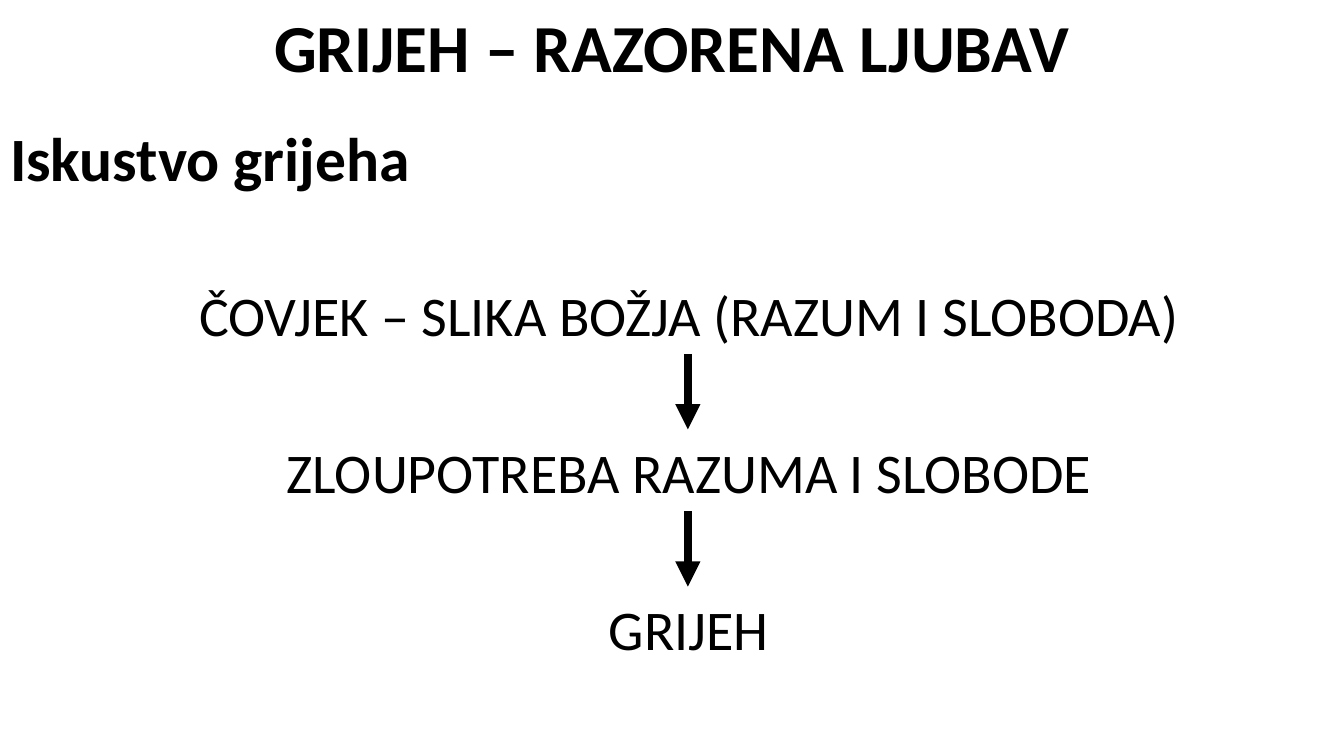
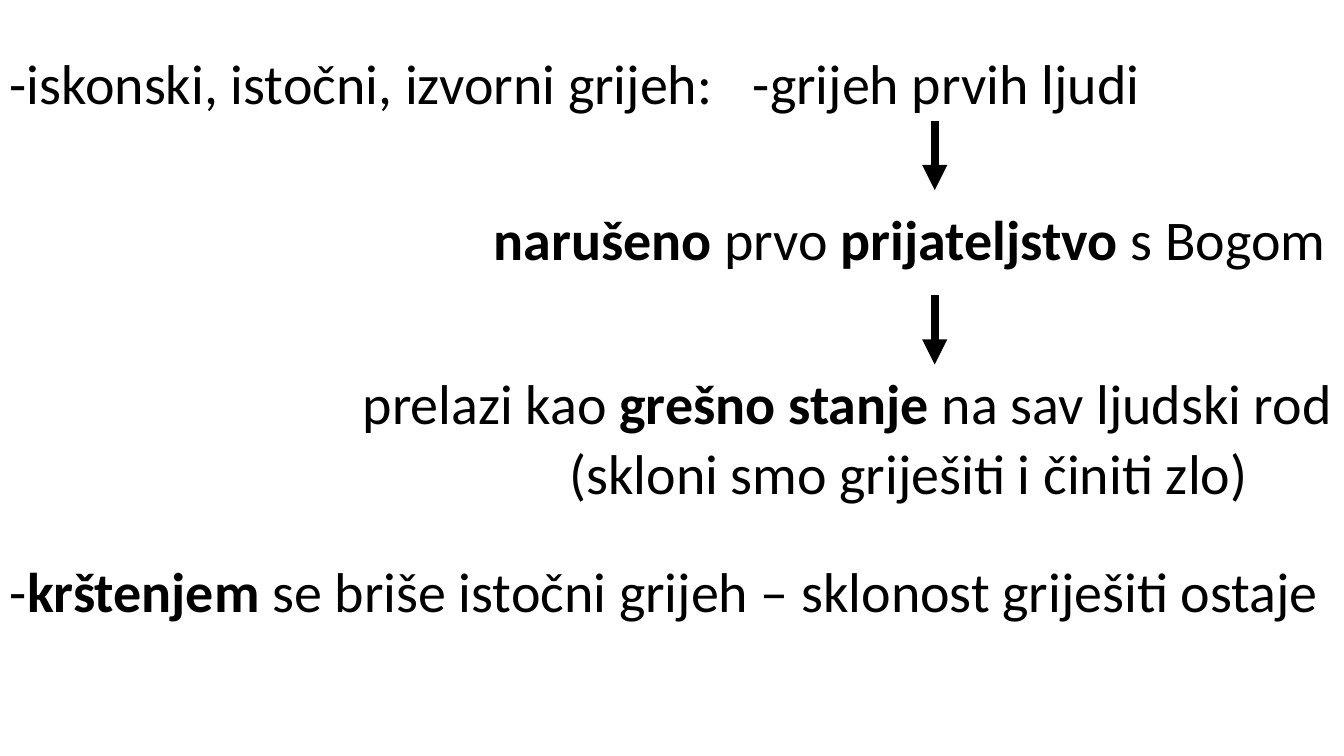
from dataclasses import dataclass

from lxml.etree import SubElement
from pptx import Presentation
from pptx.dml.color import RGBColor
from pptx.enum.shapes import MSO_CONNECTOR
from pptx.enum.text import MSO_ANCHOR, MSO_AUTO_SIZE, PP_ALIGN
from pptx.oxml.ns import qn
from pptx.util import Inches, Pt

COLORS = {"ink": "000000", "paper": "FFFFFF"}
FONT = "Calibri"
SLIDE_WIDTH, SLIDE_HEIGHT = Inches(13.33), Inches(7.5)
LINE_HEIGHT = 10.27
TITLE_AND_CONTENT, BLANK = 1, 6


@dataclass(frozen=True)
class Statement:
    """Lengths are percentages of the slide; *asterisks* mark bold words."""
    text: str
    left: float
    top: float
    width: float
    height: float = LINE_HEIGHT
    size: int = 40
    align: PP_ALIGN = PP_ALIGN.LEFT


@dataclass(frozen=True)
class DownArrow:
    x: float
    top: float
    length: float


def across(share: float) -> int:
    return round(SLIDE_WIDTH * share / 100)


def down(share: float) -> int:
    return round(SLIDE_HEIGHT * share / 100)


def ink() -> RGBColor:
    return RGBColor.from_string(COLORS["ink"])


def write(shape, statement: Statement) -> None:
    shape.left, shape.top = across(statement.left), down(statement.top)
    shape.width, shape.height = across(statement.width), down(statement.height)
    frame = shape.text_frame
    frame.word_wrap = True
    frame.auto_size = MSO_AUTO_SIZE.NONE
    frame.vertical_anchor = MSO_ANCHOR.TOP
    paragraph = frame.paragraphs[0]
    paragraph.alignment = statement.align
    paragraph.space_before = Pt(0)
    for position, words in enumerate(statement.text.split("*")):
        if words:
            run = paragraph.add_run()
            run.text = words
            run.font.name = FONT
            run.font.size = Pt(statement.size)
            run.font.bold = position % 2 == 1
            run.font.color.rgb = ink()


def add_statement(slide, statement: Statement) -> None:
    write(slide.shapes.add_textbox(0, 0, 0, 0), statement)


def add_arrow(slide, arrow: DownArrow) -> None:
    x = across(arrow.x)
    connector = slide.shapes.add_connector(
        MSO_CONNECTOR.STRAIGHT, x, down(arrow.top), x, down(arrow.top + arrow.length))
    connector.line.color.rgb = ink()
    connector.line.width = Pt(6)
    properties = connector.element.spPr
    SubElement(properties.find(qn("a:ln")), qn("a:tailEnd"), type="triangle")
    SubElement(properties, qn("a:effectLst"))


def add_slide(deck, layout: int):
    slide = deck.slides.add_slide(deck.slide_layouts[layout])
    slide.background.fill.solid()
    slide.background.fill.fore_color.rgb = RGBColor.from_string(COLORS["paper"])
    return slide


def build_experience(deck) -> None:
    slide = add_slide(deck, TITLE_AND_CONTENT)
    write(slide.shapes.title, Statement(
        "*GRIJEH – RAZORENA LJUBAV*", 0, 0, 100, 12.13, 48, PP_ALIGN.CENTER))
    subtitle = slide.placeholders[1]
    write(subtitle, Statement("*Iskustvo grijeha*", 0, 15.2, 100, 11.2, 44))
    paragraph_format = subtitle.text_frame.paragraphs[0]._p.get_or_add_pPr()
    paragraph_format.set("marL", "0")
    paragraph_format.set("indent", "0")
    SubElement(paragraph_format, qn("a:buNone"))

    steps = ("ČOVJEK – SLIKA BOŽJA (RAZUM I SLOBODA)",
             "ZLOUPOTREBA RAZUMA I SLOBODE",
             "GRIJEH")
    first_top, pitch, left = 36.4, 20.8, 1.25
    for index, step in enumerate(steps):
        top = first_top + index * pitch
        add_statement(slide, Statement(step, left, top, 100, align=PP_ALIGN.CENTER))
        if index < len(steps) - 1:
            add_arrow(slide, DownArrow(left + 49.93, top + 10.4, 10))


def build_original_sin(deck) -> None:
    slide = add_slide(deck, BLANK)
    statements = (
        Statement("-iskonski, istočni, izvorni grijeh:", 0, 5.73, 55.2),
        Statement("-grijeh prvih ljudi", 55.29, 5.73, 44.71),
        Statement("*narušeno* prvo *prijateljstvo* s Bogom", 36, 26.4, 64),
        Statement("prelazi kao *grešno stanje *na sav ljudski rod", 26.25, 48.13, 73.75),
        Statement("(skloni smo griješiti i činiti zlo)", 41.63, 57.33, 52.8),
        Statement("-*krštenjem* se briše istočni grijeh – sklonost griješiti ostaje",
                  0, 72.93, 100),
    )
    for statement in statements:
        add_statement(slide, statement)
    for top in (16, 39.07):
        add_arrow(slide, DownArrow(69.55, top, 9.15))


def main() -> None:
    deck = Presentation()
    deck.slide_width, deck.slide_height = SLIDE_WIDTH, SLIDE_HEIGHT
    build_experience(deck)
    build_original_sin(deck)
    deck.save("out.pptx")


if __name__ == "__main__":
    main()
